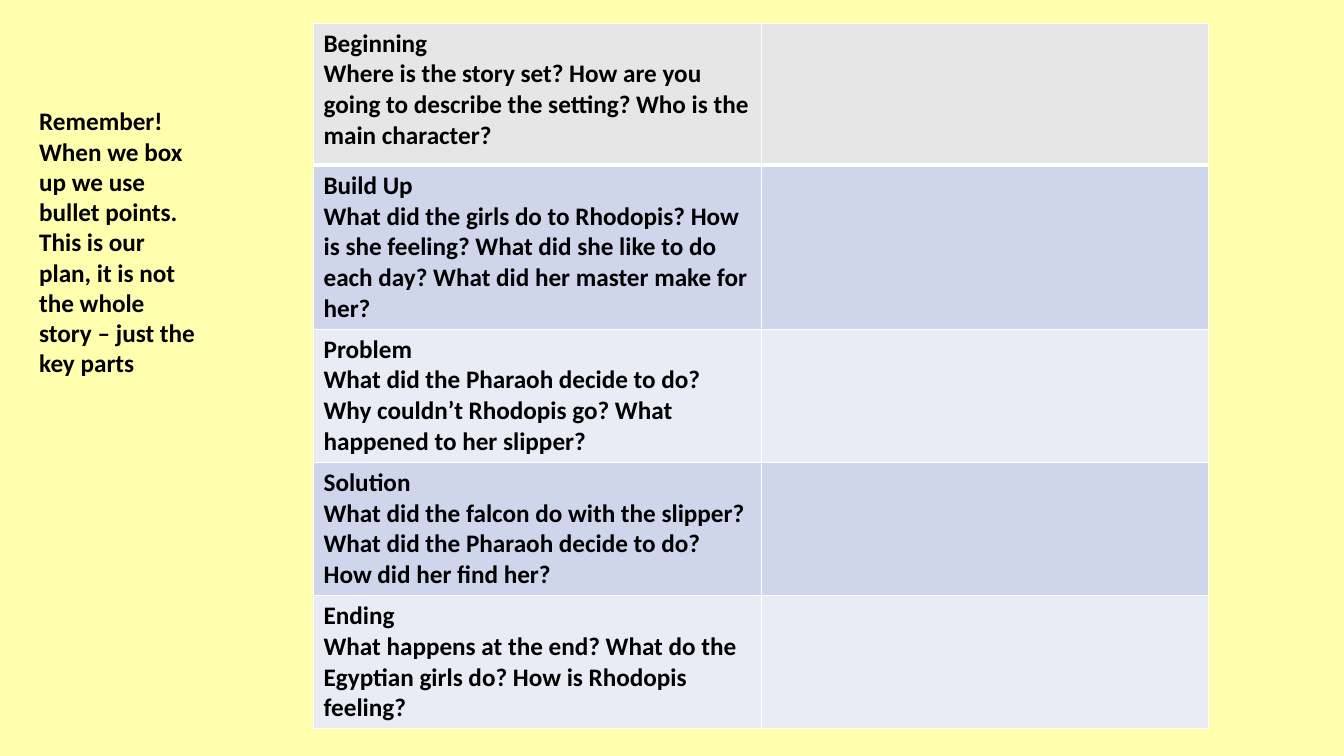
"""Build a story planning slide with a boxing-up table and a reminder."""
from lxml import etree
from pptx import Presentation
from pptx.dml.color import RGBColor
from pptx.enum import text
from pptx.oxml import ns
from pptx.util import Inches, Pt

COLORS = {"back": "FFFFAD", "grey": "E7E6E6", "blue": "CFD5EA",
          "pale": "E9EBF5", "line": "FFFFFF", "text": "000000"}
ROWS = [
    ("Beginning", "Where is the story set? How are you going to describe the setting? "
     "Who is the main character?", "grey"),
    ("Build Up", "What did the girls do to Rhodopis? How is she feeling? What did she "
     "like to do each day? What did her master make for her?", "blue"),
    ("Problem", "What did the Pharaoh decide to do? Why couldn’t Rhodopis go? "
     "What happened to her slipper?", "pale"),
    ("Solution", "What did the falcon do with the slipper? What did the Pharaoh decide "
     "to do? How did her find her?", "blue"),
    ("Ending", "What happens at the end? What do the Egyptian girls do? "
     "How is Rhodopis feeling?", "pale"),
]


def format_text(tf):
    for p in tf.paragraphs:
        for r in p.runs:
            r.font.name = "Calibri"
            r.font.size = Pt(18)
            r.font.bold = True
            r.font.color.rgb = RGBColor.from_string(COLORS["text"])


def add_border(cell, side, width):
    ln = etree.SubElement(cell._tc.get_or_add_tcPr(), ns.qn(f"a:ln{side}"), w=str(Pt(width)))
    fill = etree.SubElement(ln, ns.qn("a:solidFill"))
    etree.SubElement(fill, ns.qn("a:srgbClr"), val=COLORS["line"])


prs = Presentation()
prs.slide_width, prs.slide_height = Inches(13.33), Inches(7.5)
s = prs.slides.add_slide(prs.slide_layouts[6])
s.background.fill.solid()
s.background.fill.fore_color.rgb = RGBColor.from_string(COLORS["back"])

table = s.shapes.add_table(len(ROWS), 2, Inches(3.11), Inches(0.23),
                           Inches(8.88), Inches(6.49)).table
for i, (stage, questions, color) in enumerate(ROWS):
    table.rows[i].height = Inches(1.41 if i == 0 else 1.27)
    table.cell(i, 0).text_frame.text = f"{stage}\n{questions}"
    format_text(table.cell(i, 0).text_frame)
    for cell in table.rows[i].cells:
        for side in "LRTB":
            under_header = (i, side) in [(0, "B"), (1, "T")]
            add_border(cell, side, 3 if under_header else 1)
        cell.fill.solid()
        cell.fill.fore_color.rgb = RGBColor.from_string(COLORS[color])

reminder = s.shapes.add_textbox(Inches(0.29), Inches(1), Inches(1.8), Inches(2.83))
tf = reminder.text_frame
tf.word_wrap = True
tf.auto_size = text.MSO_AUTO_SIZE.SHAPE_TO_FIT_TEXT
tf.text = ("Remember! When we box up we use bullet points. This is our plan, "
           "it is not the whole story – just the key parts")
format_text(tf)

prs.save("out.pptx")
